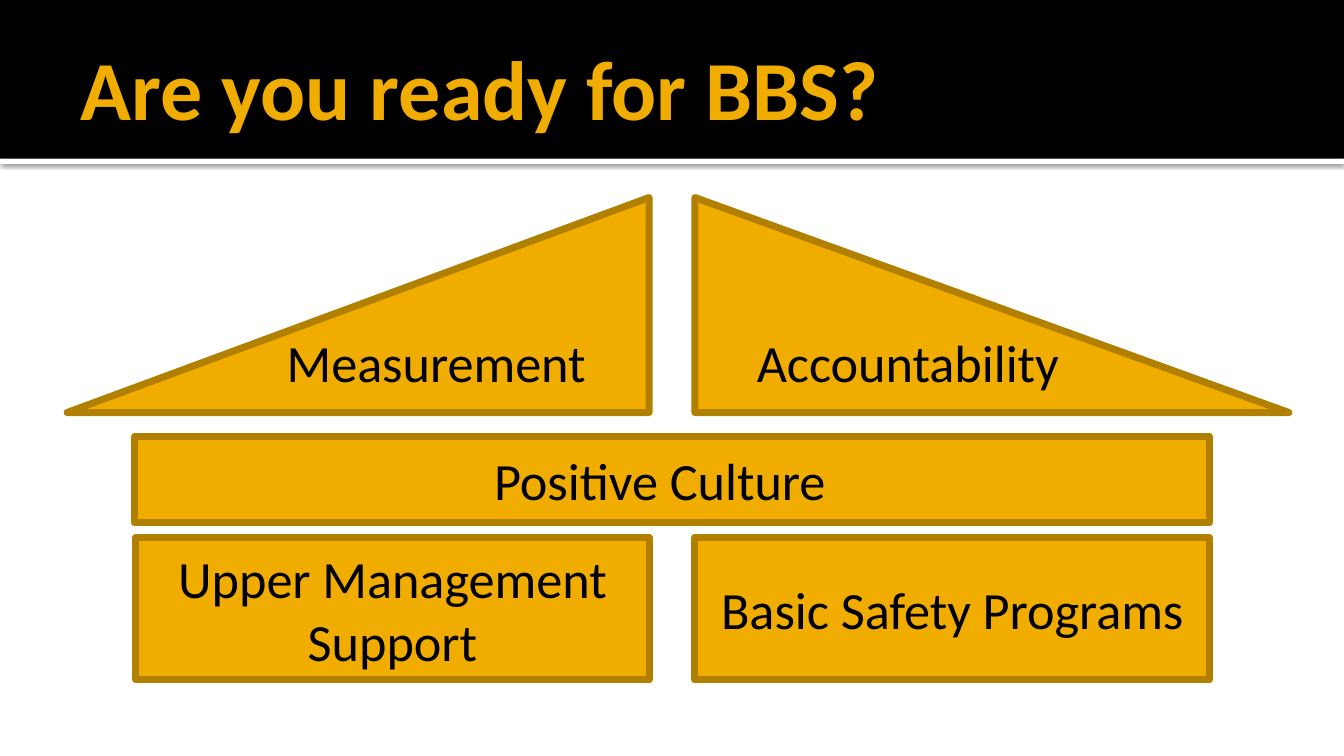
from lxml import etree
from pptx import Presentation
from pptx.dml.color import RGBColor
from pptx.enum.shapes import MSO_SHAPE
from pptx.enum.text import MSO_ANCHOR, PP_ALIGN
from pptx.oxml.ns import qn
from pptx.util import Inches, Pt

RECTANGLE = MSO_SHAPE.RECTANGLE
TRIANGLE = MSO_SHAPE.ISOSCELES_TRIANGLE
MIDDLE = MSO_ANCHOR.MIDDLE
LEFT, CENTER = PP_ALIGN.LEFT, PP_ALIGN.CENTER

BLACK = RGBColor(0x00, 0x00, 0x00)
WHITE = RGBColor(0xFF, 0xFF, 0xFF)
GOLD = RGBColor(0xF0, 0xAD, 0x00)
DARK_GOLD = RGBColor(0xB2, 0x80, 0x00)
FONT = "Calibri"

SLIDE_WIDTH = 10
SLIDE_HEIGHT = SLIDE_WIDTH * 9 / 16
HEADER_HEIGHT = 1.18
LEFT_EDGE, RIGHT_EDGE = 4.83, 5.17  # inner edges of the two halves
ROOF_TOP, ROOF_HEIGHT = 1.47, 1.6
BASE_TOP, BASE_HEIGHT = 4, 1.06


def write(frame, text, size=28, color=BLACK, align=CENTER, bold=False):
    frame.text = text
    frame.word_wrap = True
    paragraph = frame.paragraphs[0]
    paragraph.alignment = align
    font = paragraph.font
    font.name, font.size, font.bold = FONT, Pt(size), bold
    font.color.rgb = color


def add_solid(slide, kind, box, fill):
    solid = slide.shapes.add_shape(kind, *map(Inches, box))
    solid.shadow.inherit = False
    solid.fill.solid()
    solid.fill.fore_color.rgb = fill
    solid.line.fill.background()
    return solid


def add_block(slide, kind, box):
    """Add a gold building block with a dark, round-cornered outline."""
    block = add_solid(slide, kind, box, GOLD)
    block.line.color.rgb = DARK_GOLD
    block.line.width = Pt(3.78)
    etree.SubElement(block.line._get_or_add_ln(), qn("a:round"))
    return block


def add_wall(slide, box, text):
    wall = add_block(slide, RECTANGLE, box)
    write(wall.text_frame, text)
    wall.text_frame.vertical_anchor = MIDDLE
    return wall


def add_roof(slide, left, width, peak, label_left, label_width, text):
    """Add a roof half; peak is the apex position, 0 (left) to 1 (right)."""
    roof = add_block(slide, TRIANGLE, (left, ROOF_TOP, width, ROOF_HEIGHT))
    roof.adjustments[0] = peak
    label_box = (label_left, 2.41, label_width, 0.57)
    label = slide.shapes.add_textbox(*map(Inches, label_box))
    write(label.text_frame, text)


def add_drop_shadow(shape):
    effects = shape._element.spPr.find(qn("a:effectLst"))
    shadow = etree.SubElement(
        effects, qn("a:outerShdw"), blurRad=str(Pt(2.5)), dist=str(Pt(0.8)),
        dir="5400000", algn="tl", rotWithShape="0")
    color = etree.SubElement(shadow, qn("a:srgbClr"), val=str(BLACK))
    etree.SubElement(color, qn("a:alpha"), val="60000")


def add_header(slide, text):
    divider = add_solid(
        slide, RECTANGLE, (0, HEADER_HEIGHT, SLIDE_WIDTH, 0.04), WHITE)
    add_drop_shadow(divider)
    add_solid(slide, RECTANGLE, (0, 0, SLIDE_WIDTH, HEADER_HEIGHT), BLACK)

    title = slide.shapes.title
    title.left, title.top = Inches(0.5), Inches(0.13)
    title.width, title.height = Inches(9), Inches(1.03)
    frame = title.text_frame
    write(frame, text, size=45, color=GOLD, align=LEFT, bold=True)
    frame.vertical_anchor = MIDDLE
    frame.margin_left = Inches(0.1)
    frame.margin_right = Inches(0.05)
    slide.shapes._spTree.append(title._element)  # in front of the header band


def main():
    presentation = Presentation()
    presentation.slide_width = Inches(SLIDE_WIDTH)
    presentation.slide_height = Inches(SLIDE_HEIGHT)
    slide = presentation.slides.add_slide(presentation.slide_layouts[5])

    add_header(slide, "Are you ready for BBS?")

    add_wall(slide, (1.01, BASE_TOP, LEFT_EDGE - 1.01, BASE_HEIGHT),
             "Upper Management Support")
    add_wall(slide, (RIGHT_EDGE, BASE_TOP, 9 - RIGHT_EDGE, BASE_HEIGHT),
             "Basic Safety Programs")
    culture = add_wall(slide, (1, 3.25, 8, 0.64), "Positive Culture")
    culture.text_frame.margin_right = Inches(0.28)  # text sits left of centre

    add_roof(slide, RIGHT_EDGE, 4.42, 0, RIGHT_EDGE, 3.17, "Accountability")
    add_roof(slide, 0.5, LEFT_EDGE - 0.5, 1, 1.67, 3.15, "Measurement")

    presentation.save("out.pptx")


if __name__ == "__main__":
    main()
